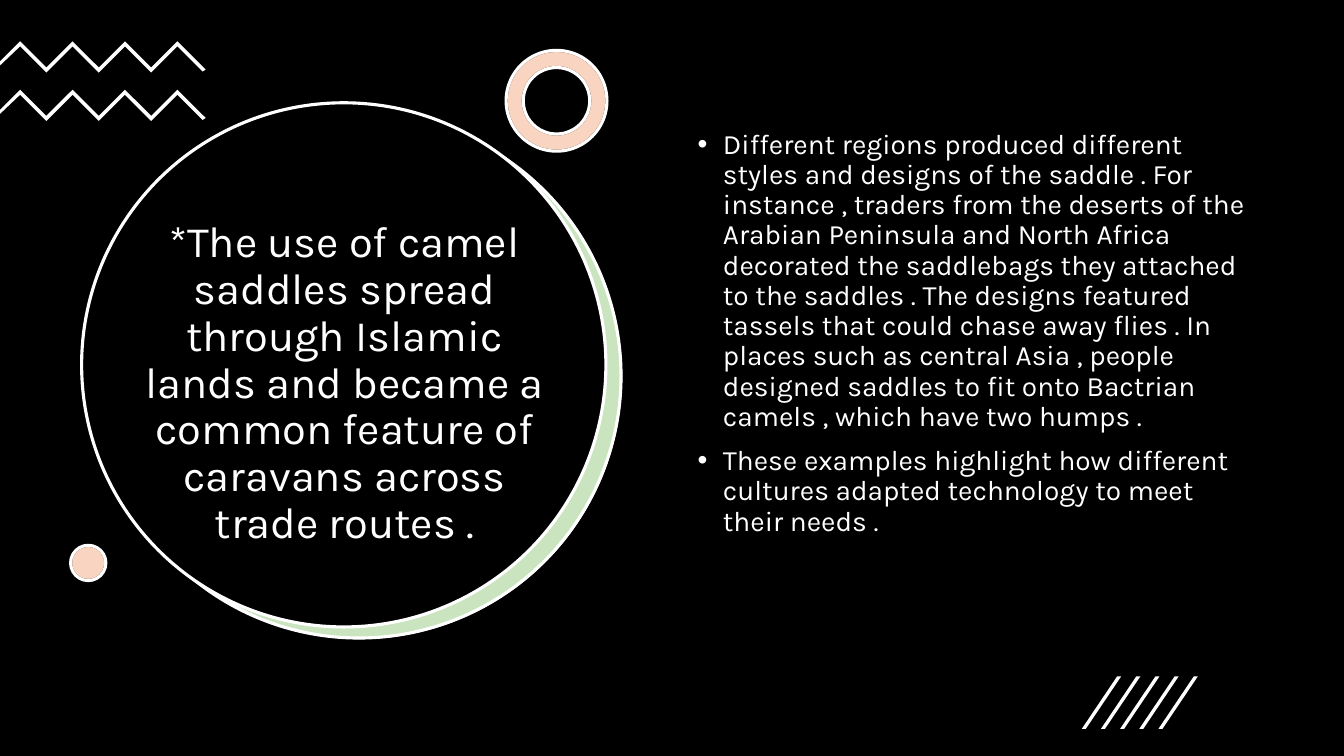
from lxml.etree import SubElement
from pptx import Presentation
from pptx.dml.color import RGBColor
from pptx.enum.shapes import MSO_SHAPE
from pptx.enum.text import MSO_ANCHOR, MSO_AUTO_SIZE, PP_ALIGN
from pptx.oxml.ns import qn
from pptx.util import Inches, Pt

COLORS = {"black": "000000", "white": "FFFFFF", "green": "4EA72E", "orange": "E97132"}
TITLE = ("*The use of camel saddles spread through Islamic lands and became "
         "a common feature of caravans across trade routes .")
POINTS = [
    "Different regions produced different styles and designs of the saddle . "
    "For instance , traders from the deserts of the Arabian Peninsula and North "
    "Africa decorated the saddlebags they attached to the saddles . The designs "
    "featured tassels that could chase away flies . In places such as central "
    "Asia , people designed saddles to fit onto Bactrian camels , which have two humps .",
    "These examples highlight how different cultures adapted technology to meet "
    "their needs .",
]


class Deck:
    """Holds the style and the current slide, and draws each kind of element."""

    def __init__(self, slide, font):
        self.slide, self.font = slide, font
        self.paint(slide.background.fill, "black")

    def paint(self, fill, color, alpha=None):
        fill.solid()
        fill.fore_color.rgb = RGBColor.from_string(COLORS[color])
        if alpha:
            tint = fill.fore_color._xFill.find(qn("a:srgbClr"))
            SubElement(tint, qn("a:alpha")).set("val", str(alpha * 1000))

    def shape(self, kind, left, top, size, color, line=None, alpha=None):
        shape = self.slide.shapes.add_shape(
            kind, Inches(left), Inches(top), Inches(size), Inches(size))
        shape.shadow.inherit = False
        self.paint(shape.fill, color, alpha)
        if line:
            self.paint(shape.line.fill, line)
            shape.line.width = Pt(2.25)
        else:
            shape.line.fill.background()
        return shape

    def tinted(self, kind, left, top, size, color, rim=None):
        base = self.shape(kind, left, top, size, "white", "black")
        cover = self.shape(kind, left, top, size, color, "white", 30)
        if rim:
            base.adjustments[0] = cover.adjustments[0] = rim

    def outline(self, group, points):
        spots = [(Inches(x), Inches(y)) for x, y in points]
        pen = group.shapes.build_freeform(*spots[0], scale=1.0)
        pen.add_line_segments(spots[1:], close=True)
        shape = pen.convert_to_shape()
        shape.shadow.inherit = False
        self.paint(shape.fill, "white")
        shape.line.fill.background()

    def group(self, outlines):
        group = self.slide.shapes.add_group_shape()
        for points in outlines:
            self.outline(group, points)

    def text(self, holder, box, lines, size, anchor):
        holder.left, holder.top, holder.width, holder.height = map(Inches, box)
        self.slide.shapes._spTree.append(holder.element)
        frame = holder.text_frame
        frame.text = "\n".join(lines)
        frame.word_wrap = True
        frame.auto_size = MSO_AUTO_SIZE.NONE
        frame.vertical_anchor = anchor
        for para in frame.paragraphs:
            para.line_spacing = 0.9
            para.font.name, para.font.size = self.font, Pt(size)
            para.font.color.rgb = RGBColor.from_string(COLORS["white"])
        return frame.paragraphs

    def title(self, box, line, size):
        para, = self.text(self.slide.shapes.title, box, [line], size, MSO_ANCHOR.MIDDLE)
        para.alignment = PP_ALIGN.CENTER

    def bullets(self, box, lines, size):
        for para in self.text(self.slide.placeholders[1], box, lines, size, MSO_ANCHOR.TOP):
            para.space_before = Pt(10)
            props = para._p.get_or_add_pPr()
            props.set("marL", str(Inches(0.25)))
            props.set("indent", str(Inches(-0.25)))


def zigzag(top):
    """Return the outline of one zigzag band that starts at the slide edge."""
    turns = [(0.2 + 0.26 * i, top + 0.26 * (i % 2)) for i in range(7)]
    under = [(x, y + 0.05) for x, y in reversed(turns)]
    return (turns + [(2.04, top + 0.28), (2.01, top + 0.3)] + under
            + [(0, top + 0.24), (0, top + 0.2)])


def slash(left):
    """Return the outline of one slanted stroke."""
    return [(left + 0.04, 7.23), (left, 7.23), (left + 0.35, 6.71), (left + 0.39, 6.71)]


def main():
    """Build the slide and save it."""
    show = Presentation()
    show.slide_width, show.slide_height = Inches(13.33), Inches(7.5)
    deck = Deck(show.slides.add_slide(show.slide_layouts[1]), "Karla")
    oval = MSO_SHAPE.OVAL
    deck.shape(oval, 0.97, 1.14, 5.2, "white")
    deck.shape(oval, 0.96, 1.13, 5.2, "green", "white", 30)
    deck.shape(oval, 0.81, 1.02, 5.2, "black", "white")
    deck.title((1.21, 2.05, 4.41, 3.52), TITLE, 31)
    deck.group(zigzag(top) for top in (0.41, 0.89))
    deck.tinted(MSO_SHAPE.DONUT, 5.02, 0.5, 1, "orange", 0.17)
    deck.tinted(oval, 0.7, 5.41, 0.35, "orange")
    deck.bullets((6.82, 1.24, 5.71, 4.76), POINTS, 20)
    deck.group(slash(10.73 + 0.19 * i) for i in range(5))
    show.save("out.pptx")


if __name__ == "__main__":
    main()
